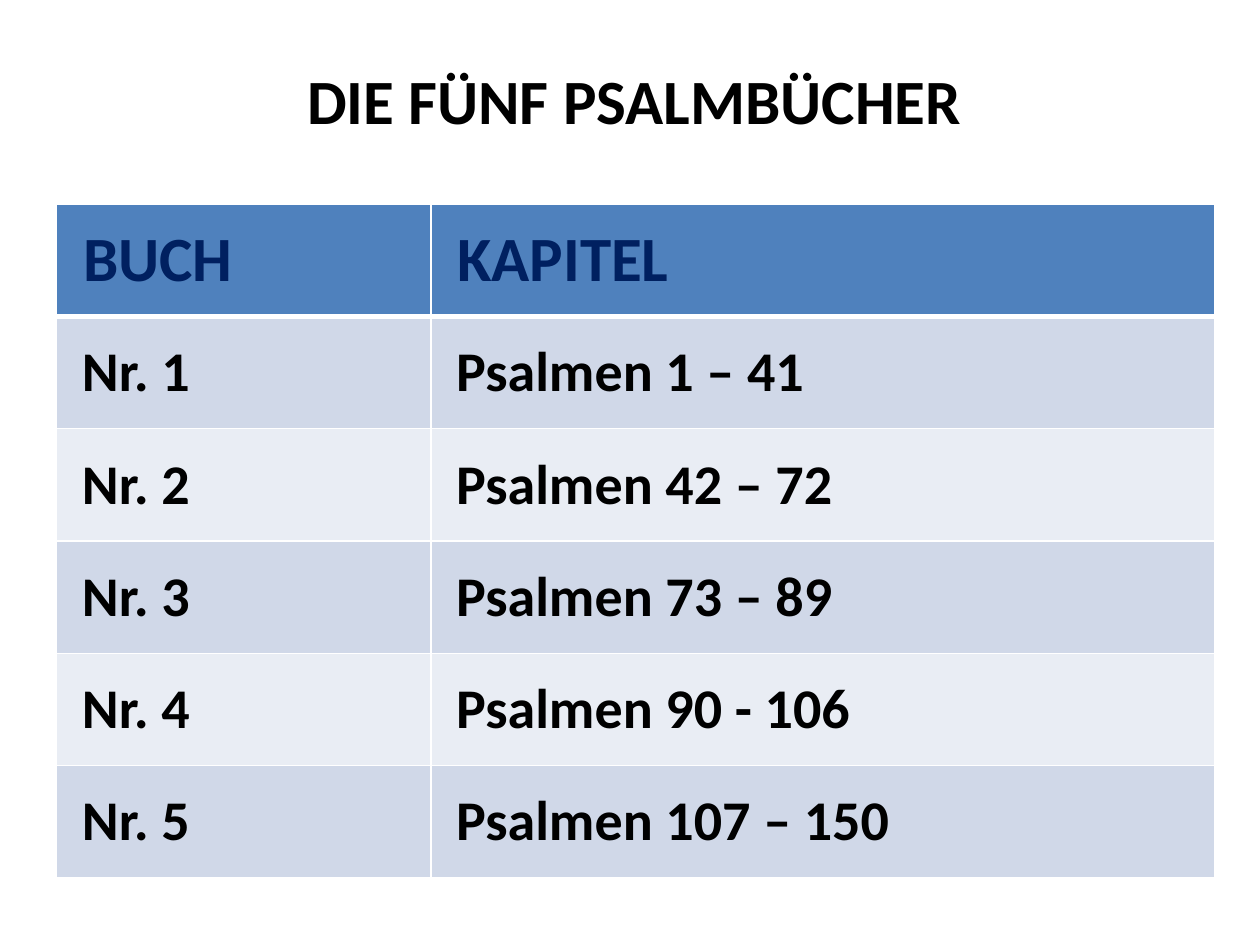
from lxml import etree
from pptx import Presentation
from pptx.dml.color import RGBColor
from pptx.enum import text
from pptx.oxml import ns
from pptx.util import Inches, Pt

FONT = "Calibri"
WHITE, BLACK, NAVY = "FFFFFF", "000000", "002060"
HEAD, BANDS = "4F81BD", ("D0D8E8", "E9EDF4")
ROWS = [
    ("BUCH", "KAPITEL"),
    ("Nr. 1", "Psalmen 1 – 41"),
    ("Nr. 2", "Psalmen 42 – 72"),
    ("Nr. 3", "Psalmen 73 – 89"),
    ("Nr. 4", "Psalmen 90 - 106"),
    ("Nr. 5", "Psalmen 107 – 150"),
]


def rgb(code):
    return RGBColor.from_string(code)


def paint(part, code):
    part.fill.solid()
    part.fill.fore_color.rgb = rgb(code)


def write(frame, words, size=32, color=BLACK, align=text.PP_ALIGN.LEFT):
    frame.word_wrap = True
    para = frame.paragraphs[0]
    para.alignment = align
    run = para.add_run()
    run.text = words
    font = run.font
    font.name, font.size, font.bold = FONT, Pt(size), True
    font.color.rgb = rgb(color)


def edge(cell, side, width):
    """Add a white border; fill must be set afterwards."""
    line = etree.SubElement(cell._tc.get_or_add_tcPr(), ns.qn("a:" + side),
                            w=str(Pt(width)))
    fill = etree.SubElement(line, ns.qn("a:solidFill"))
    etree.SubElement(fill, ns.qn("a:srgbClr"), val=WHITE)


def add_title(slide, left, top, width, height):
    title = slide.shapes.title
    title.left, title.top = Inches(left), Inches(top)
    title.width, title.height = Inches(width), Inches(height)
    # Translucent white panel
    paint(title, WHITE)
    color = title.fill._xPr.find(".//" + ns.qn("a:srgbClr"))
    etree.SubElement(color, ns.qn("a:alpha"), val="60000")
    frame = title.text_frame
    frame.auto_size = text.MSO_AUTO_SIZE.NONE
    frame.vertical_anchor = text.MSO_ANCHOR.TOP
    write(frame, "DIE FÜNF PSALMBÜCHER", size=36, align=text.PP_ALIGN.CENTER)


def add_books(slide, left, top, width, height, first):
    table = slide.shapes.add_table(
        len(ROWS), 2, Inches(left), Inches(top), Inches(width), Inches(height)
    ).table
    for col, wide in zip(table.columns, (first, width - first)):
        col.width = Inches(wide)
    for r, row in enumerate(ROWS):
        table.rows[r].height = Inches(height / len(ROWS))
        for c, words in enumerate(row):
            cell = table.cell(r, c)
            cell.vertical_anchor = text.MSO_ANCHOR.MIDDLE
            cell.margin_left = Inches(0.2 if r else 0.21)
            # Thick rule between header and body
            edge(cell, "lnL", 1)
            edge(cell, "lnR", 1)
            edge(cell, "lnT", 3 if r == 1 else 1)
            edge(cell, "lnB", 1 if r else 3)
            paint(cell, BANDS[(r - 1) % 2] if r else HEAD)
            write(cell.text_frame, words, size=32 if r else 36,
                  color=BLACK if r else NAVY)


def main():
    deck = Presentation()
    deck.slide_width, deck.slide_height = Inches(10), Inches(7.5)
    slide = deck.slides.add_slide(deck.slide_layouts[5])
    add_title(slide, 0.43, 0.44, 9.21, 0.63)
    add_books(slide, 0.45, 1.62, 9.19, 5.35, first=2.97)
    deck.save("out.pptx")


if __name__ == "__main__":
    main()
